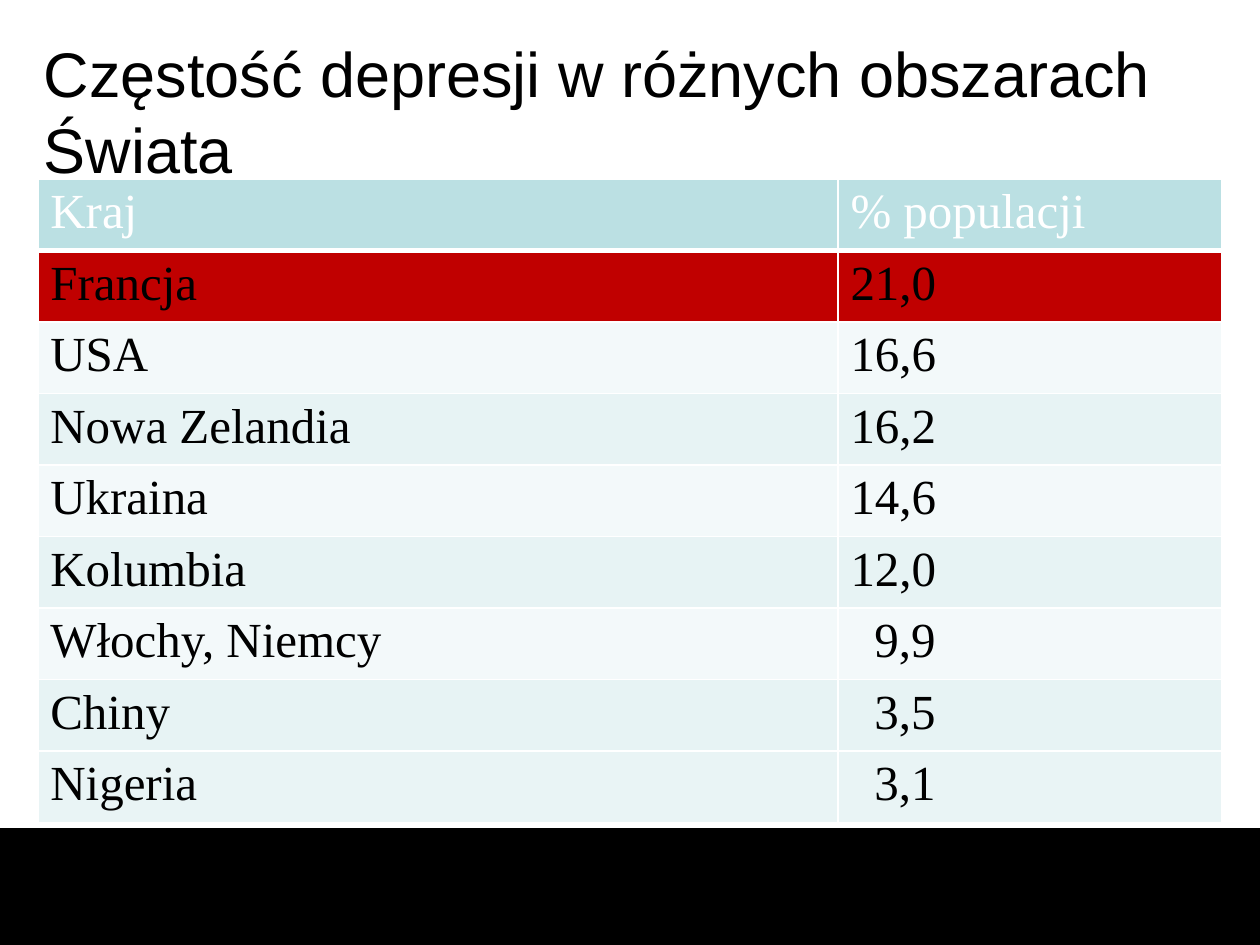
import pptx
import pptx.dml.color
import pptx.enum.text
import pptx.oxml
import pptx.oxml.ns
import pptx.util

Inches = pptx.util.Inches
Pt = pptx.util.Pt
RGBColor = pptx.dml.color.RGBColor

BLACK = RGBColor(0x00, 0x00, 0x00)
WHITE = RGBColor(0xFF, 0xFF, 0xFF)
TEAL = RGBColor(0xBB, 0xE0, 0xE3)
RED = RGBColor(0xC0, 0x00, 0x00)
PALE = RGBColor(0xF3, 0xF9, 0xFA)
LIGHT = RGBColor(0xE7, 0xF3, 0xF4)
LAST = RGBColor(0xE9, 0xF4, 0xF5)


def style(para, name, size, color):
    for key, val in {"name": name, "size": Pt(size)}.items():
        setattr(para.font, key, val)
    para.font.color.rgb = color


def border(cell, widths):
    props = cell._tc.get_or_add_tcPr()
    for spot, (side, width) in enumerate(widths.items()):
        line = pptx.oxml.parse_xml(
            f'<a:{side} {pptx.oxml.ns.nsdecls("a")} w="{Pt(width)}">'
            f'<a:solidFill><a:srgbClr val="{WHITE}"/></a:solidFill></a:{side}>')
        props.insert(spot, line)


deck = pptx.Presentation()
deck.slide_width, deck.slide_height = Inches(10), Inches(7.5)
slide = deck.slides.add_slide(deck.slide_layouts[6])

# Black footer band
band = slide.shapes.add_shape(
    pptx.enum.shapes.MSO_SHAPE.RECTANGLE,
    Inches(0), Inches(6.58), Inches(10), Inches(0.92))
band.shadow.inherit = False
band.fill.solid()
band.fill.fore_color.rgb = BLACK
band.line.color.rgb = BLACK
band.line.width = Pt(0.75)

# Title
title = slide.shapes.add_textbox(
    Inches(0.25), Inches(0.25), Inches(9.42), Inches(1.25))
frame = title.text_frame
for key, val in {"word_wrap": True,
                 "vertical_anchor": pptx.enum.text.MSO_ANCHOR.MIDDLE,
                 "text": "Częstość depresji w różnych obszarach Świata"}.items():
    setattr(frame, key, val)
style(frame.paragraphs[0], "Arial", 36, BLACK)

# Table: country, share, fill
rows = [
    ("Kraj", "% populacji", TEAL),
    ("Francja", "21,0", RED),
    ("USA", "16,6", PALE),
    ("Nowa Zelandia", "16,2", LIGHT),
    ("Ukraina", "14,6", PALE),
    ("Kolumbia", "12,0", LIGHT),
    ("Włochy, Niemcy", "9,9", PALE),
    ("Chiny", "3,5", LIGHT),
    ("Nigeria", "3,1", LAST),
]
high = 0.53
table = slide.shapes.add_table(
    len(rows), 2, Inches(0.3), Inches(1.42),
    Inches(9.4), Inches(high * len(rows))).table
for col, wide in zip(table.columns, (6.35, 3.05)):
    col.width = Inches(wide)

for r, (land, share, fill) in enumerate(rows):
    table.rows[r].height = Inches(high)
    for c, text in enumerate((land, share)):
        cell = table.cell(r, c)
        cell.text = text
        cell.fill.solid()
        cell.fill.fore_color.rgb = fill
        para = cell.text_frame.paragraphs[0]
        style(para, "Times New Roman", 28, BLACK if r else WHITE)
        para.font.bold = False
        # Single-digit shares line up on the decimal comma
        if c == 1 and len(text) == 3:
            cell.margin_left = Inches(0.29)
        border(cell, {"lnL": 1, "lnR": 1,
                      "lnT": 3 if r == 1 else 1,
                      "lnB": 1 if r else 3})

deck.save("out.pptx")
